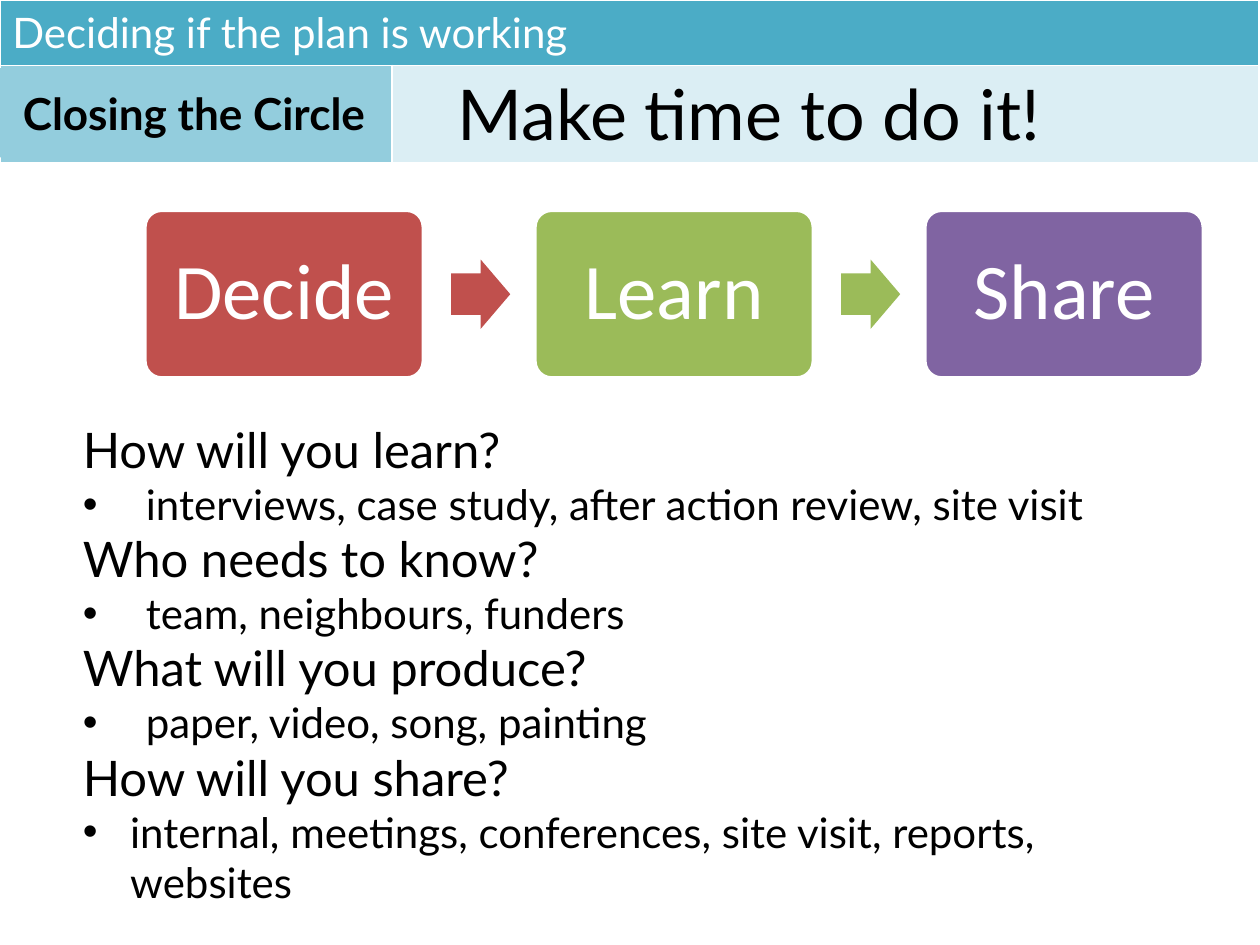
"""Build the 'Closing the Circle' slide about learning and sharing."""
from lxml import etree
from pptx import Presentation
from pptx.dml.color import RGBColor
from pptx.enum import shapes, text
from pptx.oxml import ns
from pptx.util import Pt

WHITE = RGBColor(0xFF, 0xFF, 0xFF)
BLACK = RGBColor(0, 0, 0)
TEAL = RGBColor(0x4B, 0xAC, 0xC6)
MID_TEAL = RGBColor(0x93, 0xCD, 0xDD)
PALE_TEAL = RGBColor(0xDB, 0xEE, 0xF4)
RED = RGBColor(0xC0, 0x50, 0x4D)
GREEN = RGBColor(0x9B, 0xBB, 0x59)
PURPLE = RGBColor(0x80, 0x64, 0xA2)


def write(paragraph, words, size, color, font="Lato", bold=False, align=text.PP_ALIGN.LEFT):
    paragraph.alignment = align
    run = paragraph.add_run()
    run.text = words
    run.font.name = font
    run.font.size = Pt(size)
    run.font.bold = bold
    run.font.color.rgb = color


def add_block(kind, left, top, width, height, color):
    block = slide.shapes.add_shape(kind, Pt(left), Pt(top), Pt(width), Pt(height))
    block.shadow.inherit = False
    block.fill.solid()
    block.fill.fore_color.rgb = color
    block.line.fill.background()
    return block


prs = Presentation()
prs.slide_width, prs.slide_height = Pt(720), Pt(540)
slide = prs.slides.add_slide(prs.slide_layouts[6])

header = slide.shapes.add_table(2, 2, 0, 0, Pt(719.3), Pt(92.9)).table
header.columns[0].width, header.columns[1].width = Pt(223.9), Pt(495.4)
header.rows[0].height, header.rows[1].height = Pt(37.4), Pt(55.5)
header.cell(0, 0).merge(header.cell(0, 1))
for row, colors in enumerate([(TEAL, TEAL), (MID_TEAL, PALE_TEAL)]):
    for column, color in enumerate(colors):
        cell = header.cell(row, column)
        properties = cell._tc.get_or_add_tcPr()
        for side in ("L", "R", "T", "B"):
            border = etree.SubElement(properties, ns.qn(f"a:ln{side}"), w=str(Pt(1)))
            fill = etree.SubElement(border, ns.qn("a:solidFill"))
            etree.SubElement(fill, ns.qn("a:srgbClr"), val=str(WHITE))
        cell.fill.solid()
        cell.fill.fore_color.rgb = color

topic = slide.shapes.add_textbox(0, 0, Pt(718.5), Pt(36.7)).text_frame
topic.word_wrap = True
write(topic.paragraphs[0], "Deciding if the plan is working", 24, WHITE)

section = add_block(shapes.MSO_SHAPE.RECTANGLE, 0, 38.9, 221.8, 51.1, MID_TEAL).text_frame
section.vertical_anchor = text.MSO_ANCHOR.MIDDLE
write(section.paragraphs[0], "Closing the Circle", 25.2, BLACK, bold=True,
      align=text.PP_ALIGN.CENTER)

STEP_LEFT, STEP_PITCH = 82.8, 222.85
steps = [("Decide", RED), ("Learn", GREEN), ("Share", PURPLE)]
for index, (name, color) in enumerate(steps):
    left = STEP_LEFT + index * STEP_PITCH
    step = add_block(shapes.MSO_SHAPE.ROUNDED_RECTANGLE, left, 120.2, 159.1, 95.8, color)
    step.adjustments[0] = 0.1
    step.line.color.rgb = WHITE
    step.line.width = Pt(2)
    label = step.text_frame
    label.margin_left = label.margin_right = Pt(10)
    label.vertical_anchor = text.MSO_ANCHOR.MIDDLE
    label.paragraphs[0].line_spacing = 0.9
    write(label.paragraphs[0], name, 45, WHITE, "Calibri", align=text.PP_ALIGN.CENTER)
    if index < len(steps) - 1:
        arrow = add_block(shapes.MSO_SHAPE.RIGHT_ARROW, left + 175, 148.3, 33.8, 39.6, color)
        arrow.adjustments[0] = 0.6

questions = [
    ("How will you learn?", "interviews, case study, after action review, site visit", 36),
    ("Who needs to know?", "team, neighbours, funders", 36),
    ("What will you produce?", "paper, video, song, painting", 36),
    ("How will you share?", "internal, meetings, conferences, site visit, reports, websites", 27),
]
body = slide.shapes.add_textbox(Pt(39.6), Pt(236.2), Pt(655.2), Pt(300.2)).text_frame
body.word_wrap = True
for index, (question, answer, indent) in enumerate(questions):
    paragraph = body.add_paragraph() if index else body.paragraphs[0]
    paragraph._p.get_or_add_pPr().set("marL", str(Pt(0.7)))
    write(paragraph, question, 28, BLACK)
    paragraph = body.add_paragraph()
    properties = paragraph._p.get_or_add_pPr()
    properties.set("marL", str(Pt(indent + 0.7)))
    properties.set("indent", str(-Pt(indent)))
    etree.SubElement(properties, ns.qn("a:buFont"), typeface="Arial")
    etree.SubElement(properties, ns.qn("a:buChar"), char="•")
    write(paragraph, answer, 24, BLACK)

message = slide.shapes.add_textbox(Pt(229.7), Pt(36.7), Pt(396.7), Pt(55.4)).text_frame
message.word_wrap = True
write(message.paragraphs[0], "Make time to do it!", 40, BLACK, align=text.PP_ALIGN.CENTER)

prs.save("out.pptx")
